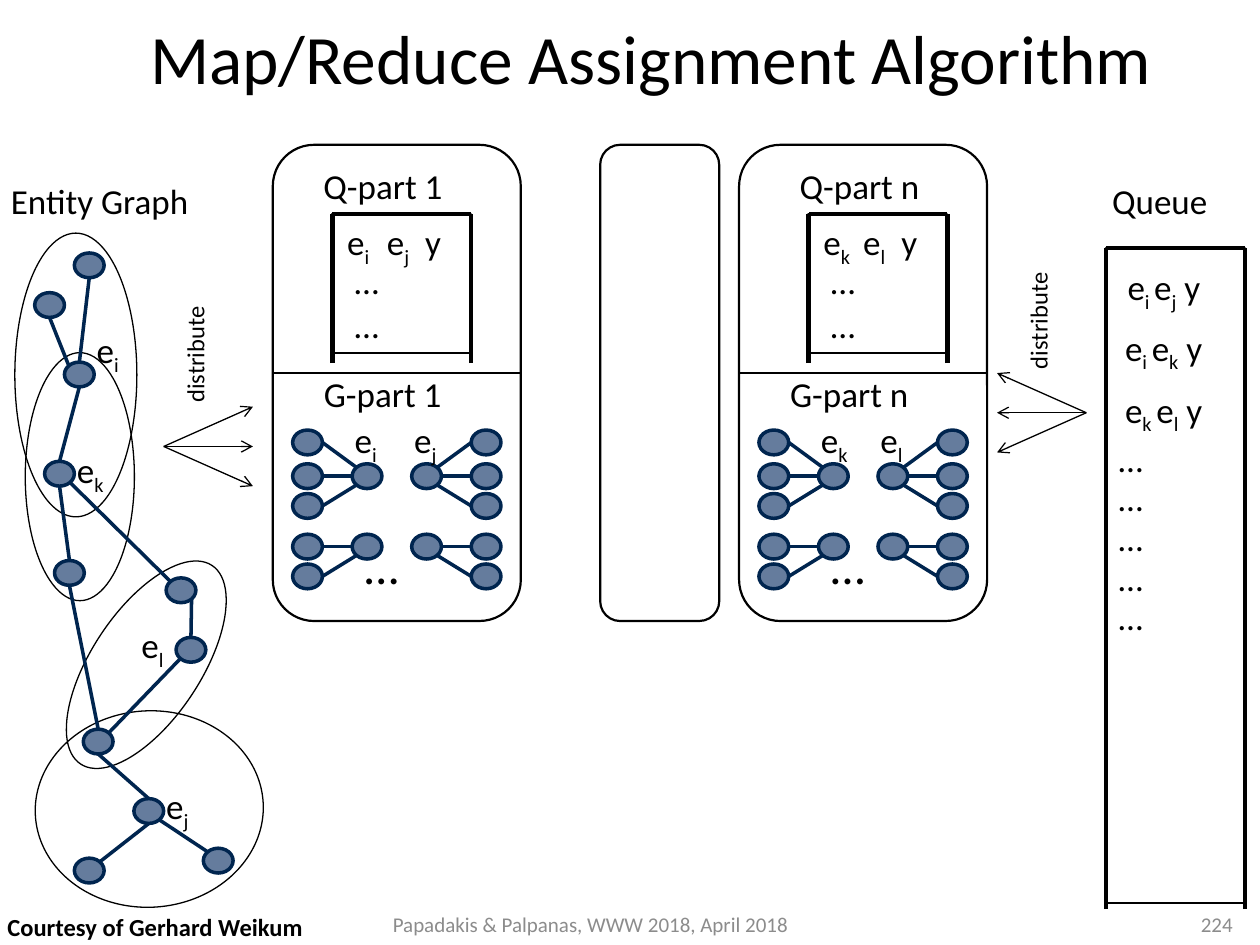
from math import cos, radians, sin

from lxml.etree import SubElement
from pptx import Presentation
from pptx.dml.color import RGBColor
from pptx.enum.shapes import MSO_CONNECTOR, MSO_SHAPE
from pptx.enum.text import MSO_ANCHOR, PP_ALIGN
from pptx.oxml.ns import qn
from pptx.util import Cm, Pt

BLACK = RGBColor(0x00, 0x00, 0x00)
GREY = RGBColor(0x8C, 0x8C, 0x8C)
NAVY = RGBColor(0x00, 0x25, 0x4F)
STEEL = RGBColor(0x65, 0x7C, 0x9D)
FONT = "Calibri"
NODE_W, NODE_H = 0.6, 0.5
# Sites run counter-clockwise around a node in steps of 45 degrees
TOP, TOP_LEFT, LEFT, BOTTOM_LEFT, BOTTOM, BOTTOM_RIGHT, RIGHT, TOP_RIGHT = range(8)


def add_text(s, x, y, w, h, text, size=20, color=BLACK, bold=False,
             align=PP_ALIGN.LEFT, anchor=MSO_ANCHOR.TOP, wrap=True, tabs=()):
    """Add a text box; every second part between bars is a subscript."""
    tf = s.shapes.add_textbox(Cm(x), Cm(y), Cm(w), Cm(h)).text_frame
    tf.word_wrap = wrap
    tf.vertical_anchor = anchor
    p = tf.paragraphs[0]
    if tabs:
        tab_list = SubElement(p._p.get_or_add_pPr(), qn("a:tabLst"))
        for pos in tabs:
            SubElement(tab_list, qn("a:tab"), pos=str(Cm(pos)), algn="l")
    for i, part in enumerate(text.split("|")):
        r = p.add_run()
        r.text = part
        if i % 2:
            r._r.get_or_add_rPr().set("baseline", "-25000")
    p.alignment = align
    f = p.font
    f.name, f.size, f.bold, f.color.rgb = FONT, Pt(size), bold, color
    return tf


def add_shape(s, kind, x, y, w, h, line=BLACK, width=1.25, fill=None):
    sp = s.shapes.add_shape(kind, Cm(x), Cm(y), Cm(w), Cm(h))
    sp.shadow.inherit = False
    if fill is None:
        sp.fill.background()
    else:
        sp.fill.solid()
        sp.fill.fore_color.rgb = fill
    sp.line.color.rgb = line
    sp.line.width = Pt(width)
    return sp


def add_line(s, start, end, color=BLACK, width=0.75, arrow=False):
    c = s.shapes.add_connector(MSO_CONNECTOR.STRAIGHT,
                               *(Cm(v) for v in (*start, *end)))
    c.line.color.rgb = color
    c.line.width = Pt(width)
    if arrow:
        SubElement(c.line._get_or_add_ln(), qn("a:tailEnd"), type="arrow")
    SubElement(c._element.spPr, qn("a:effectLst"))


def add_node(s, x, y):
    add_shape(s, MSO_SHAPE.OVAL, x, y, NODE_W, NODE_H, NAVY, 2, STEEL)
    return x, y


def site(node, number):
    x, y = node
    angle = radians(90 + 45 * number)
    return (x + NODE_W / 2 * (1 + cos(angle)), y + NODE_H / 2 * (1 - sin(angle)))


def add_edge(s, a, a_site, b, b_site):
    add_line(s, site(a, a_site), site(b, b_site), NAVY, 2)


def add_entity_graph(s, x, y):
    add_text(s, x - 0.03, y, 5, 1.11, "Entity Graph")
    for dx, dy, w, h, angle in ((0.3, 1.2, 2.46, 5.72, 0), (0.71, 10.83, 4.6, 3.96, -3.2),
                                (1.85, 7.5, 2.2, 4.8, 33.5), (0.51, 3.61, 2.2, 5, 0)):
        sp = add_shape(s, MSO_SHAPE.OVAL, x + dx, y + dy, w, h, width=0.75)
        sp.rotation = angle
    places = {
        "top": (1.5, 1.6), "upper left": (0.7, 2.4), "i": (1.3, 3.8), "k": (0.9, 5.8),
        "below k": (1.1, 7.8), "above l": (3.35, 8.15), "l": (3.55, 9.35),
        "below l": (1.68, 11.2), "j": (2.7, 12.6),
        "lower right": (4.1, 13.6), "lower left": (1.5, 13.8),
    }
    nodes = {name: add_node(s, x + dx, y + dy) for name, (dx, dy) in places.items()}
    for a, a_site, b, b_site in (
            ("top", BOTTOM, "i", TOP), ("upper left", BOTTOM, "i", TOP_LEFT),
            ("k", TOP, "i", BOTTOM), ("k", BOTTOM, "below k", TOP),
            ("k", BOTTOM_RIGHT, "above l", TOP_LEFT),
            ("above l", BOTTOM_RIGHT, "l", TOP),
            ("l", BOTTOM_LEFT, "below l", TOP_RIGHT),
            ("below k", BOTTOM, "below l", TOP), ("below l", BOTTOM, "j", TOP),
            ("j", BOTTOM_RIGHT, "lower right", TOP_LEFT),
            ("j", BOTTOM, "lower left", TOP_RIGHT)):
        add_edge(s, nodes[a], a_site, nodes[b], b_site)
    for name, dx, dy in (("i", 1.7, 3), ("j", 3.1, 12.2), ("k", 1.3, 5.42), ("l", 2.6, 8.95)):
        add_text(s, x + dx, y + dy, 1.4, 1.11, f"e|{name}")


def add_queue_frame(s, x, y, w, h, overhang):
    """Draw a thin box under a heavy frame whose sides reach below it."""
    add_shape(s, MSO_SHAPE.RECTANGLE, x, y, w, h)
    for side in (x, x + w):
        add_line(s, (side, y + h + overhang), (side, y), width=2.5)
    add_line(s, (x + w, y), (x, y), width=2.5)


def add_cluster(s, hub_x, leaf_x, hub_y, leaf_ys):
    hub = add_node(s, hub_x, hub_y)
    on_left = leaf_x < hub_x
    for leaf_y in leaf_ys:
        leaf = add_node(s, leaf_x, leaf_y)
        if leaf_y == hub_y:
            hub_site = LEFT if on_left else RIGHT
        elif leaf_y < hub_y:
            hub_site = TOP_LEFT if on_left else TOP_RIGHT
        else:
            hub_site = BOTTOM_LEFT if on_left else BOTTOM_RIGHT
        add_edge(s, leaf, RIGHT if on_left else LEFT, hub, hub_site)


def add_partition(s, x, y, w, h, name, pair, queue_dx):
    add_shape(s, MSO_SHAPE.ROUNDED_RECTANGLE, x, y, w, h)
    qx = x + queue_dx
    add_text(s, qx - 0.43, y + 0.28, 3.56, 1.11, f"Q-part {name}")
    add_queue_frame(s, qx, y + 1.4, 2.8, 2.8, 0.2)
    first, second = pair
    add_text(s, qx + 0.05, y + 1.4, 3.2, 1.11, f"e|{first}|\te|{second}|\ty", tabs=(0.8, 1.57))
    for dy in (2.18, 3.08):
        add_text(s, qx + 0.2, y + dy, 3.2, 1.11, "…")

    add_line(s, (x, y + 4.6), (x + w, y + 4.6))
    add_text(s, x + 0.78, y + 4.47, 3.56, 1.11, f"G-part {name}")
    for hub_dx, leaf_dx in ((1.6, 0.4), (2.8, 4)):
        for hub_dy, leaf_dys in ((6.43, (5.75, 6.43, 7.03)), (7.85, (7.85, 8.45))):
            add_cluster(s, x + hub_dx, x + leaf_dx, y + hub_dy, [y + dy for dy in leaf_dys])
    for dx, entity in ((1.4, first), (2.6, second)):
        add_text(s, x + dx, y + 5.4, 1.4, 1.11, f"e|{entity}")
    add_text(s, x + 1.6, y + 7.75, 1.78, 1.45, "…", 28)


def add_distribution(s, x, y, reach, label_dx):
    """Fan three arrows out of (x, y) under an upright label."""
    for dy in (-0.8, 0, 0.8):
        add_line(s, (x, y), (x + reach, y + dy), arrow=True)
    tf = add_text(s, x + label_dx, y - 3.6, 1.12, 2.97, "distribute", 14)
    tf._txBody.bodyPr.set("vert", "vert270")


def add_queue(s, x, y):
    add_text(s, x - 0.13, y - 1.5, 2.82, 1.11, "Queue")
    add_queue_frame(s, x, y, 2.8, 13.2, 0.13)
    for dx, dy, entry in ((0.18, 0.23, "e|i |e|j| y"), (0.13, 1.45, "e|i |e|k| y"),
                          (0.13, 2.7, "e|k |e|l| y")):
        add_text(s, x + dx, y + dy, 3.2, 1.11, entry)
    for i in range(5):
        add_text(s, x, y + 3.69 + 0.8 * i, 3.2, 1.11, "…")


def add_footer(s, y):
    add_text(s, 7.67, y, 10.24, 1.02, "Papadakis & Palpanas, WWW 2018, April 2018",
             12, GREY, anchor=MSO_ANCHOR.MIDDLE)
    add_text(s, 16.1, y, 9, 1.02, "224", 12, GREY,
             align=PP_ALIGN.RIGHT, anchor=MSO_ANCHOR.MIDDLE)
    add_text(s, -0.1, y + 0.15, 6.5, 0.86, "Courtesy of Gerhard Weikum", 14,
             bold=True, wrap=False)


def main():
    prs = Presentation()
    prs.slide_width, prs.slide_height = Cm(25.4), Cm(19.05)
    s = prs.slides.add_slide(prs.slide_layouts[6])
    add_text(s, 2.06, 0, 22.45, 2.29, "Map/Reduce Assignment Algorithm ", 39.6,
             align=PP_ALIGN.CENTER, anchor=MSO_ANCHOR.MIDDLE)
    add_entity_graph(s, 0, 3.5)
    add_distribution(s, 3.3, 9, 1.8, 0.2)
    add_partition(s, 5.5, 2.92, 5, 9.6, "1", "ij", 1.2)
    add_shape(s, MSO_SHAPE.ROUNDED_RECTANGLE, 12.1, 2.92, 2.4, 9.6)
    add_partition(s, 14.9, 2.92, 5, 9.6, "n", "kl", 1.4)
    add_distribution(s, 21.9, 8.32, -1.8, -1.4)
    add_queue(s, 22.3, 5)
    add_footer(s, 18.11)
    prs.save("out.pptx")


if __name__ == "__main__":
    main()
